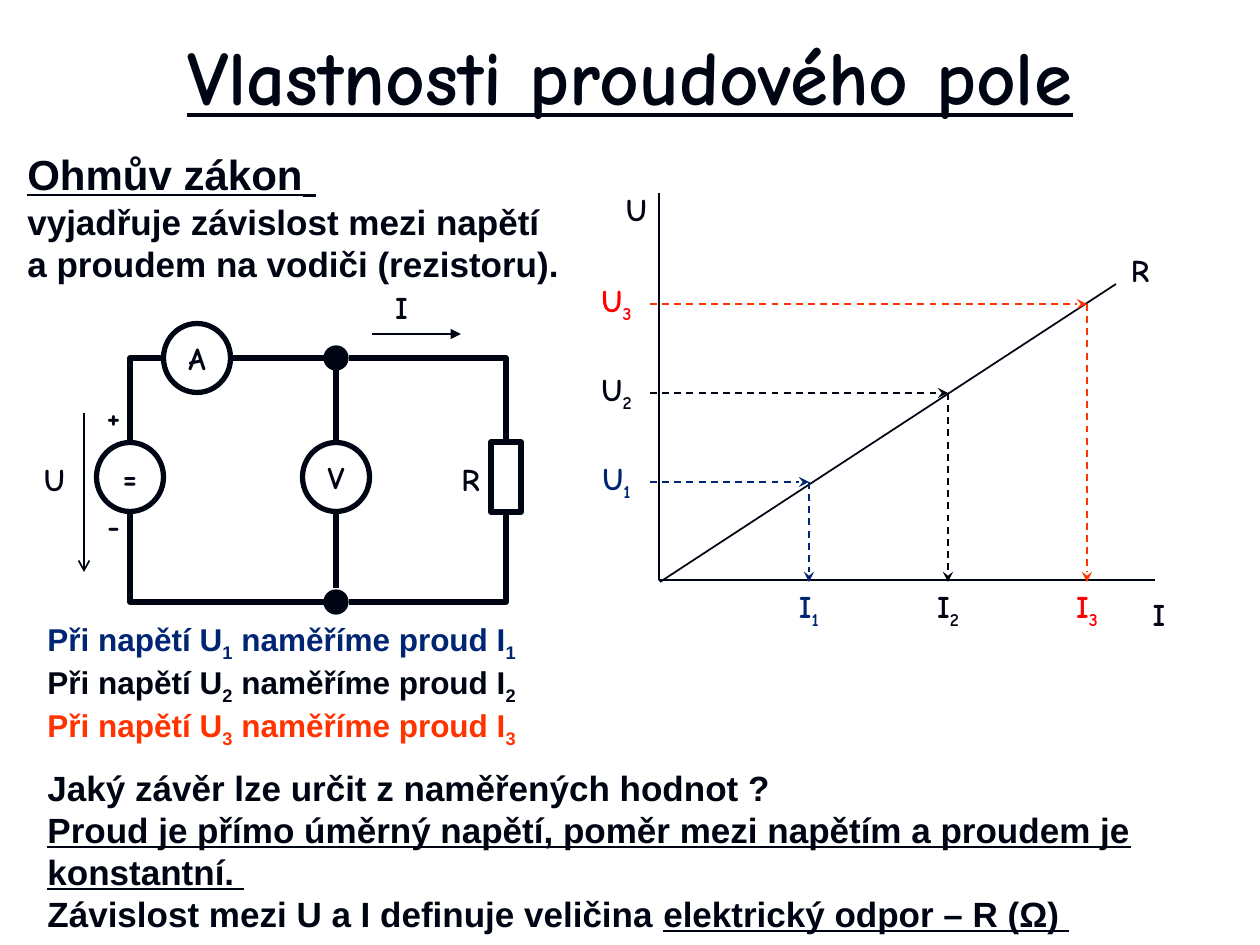
from pptx import Presentation
from pptx import util as u
from pptx.dml.color import RGBColor
from pptx.enum import dml, shapes, text
from pptx.oxml.ns import qn
from lxml import etree

SCALE = 914400 / 126  # EMU in one px
INK = {"black": "000514", "blue": "002673", "red": "FF0000", "fire": "FF3300"}
HAND, SANS = "Comic Neue", "Arial"


def px(n):
    return round(n * SCALE)


def rgb(ink):
    return RGBColor.from_string(INK[ink])


def add_run(para, words, size, font=SANS, ink="black", under=False, sub=False):
    run = para.add_run()
    run.text = words
    face = run.font
    face.size, face.name, face.bold = u.Pt(size), font, True
    face.underline = under
    face.color.rgb = rgb(ink)
    if sub:
        face._element.set("baseline", "-25000")


def set_frame(frame, inset=None, wrap=True):
    frame.word_wrap = wrap
    frame.auto_size = text.MSO_AUTO_SIZE.SHAPE_TO_FIT_TEXT
    if inset is not None:
        frame.margin_left = frame.margin_right = px(inset)
        frame.margin_top = frame.margin_bottom = px(inset)


def add_box(slide, x, y, w, h, **opts):
    frame = slide.shapes.add_textbox(px(x), px(y), px(w), px(h)).text_frame
    set_frame(frame, **opts)
    return frame


def add_label(slide, x, y, w, words, sub="", ink="black"):
    para = add_box(slide, x, y, w, 48, inset=5, wrap=False).paragraphs[0]
    para.alignment = text.PP_ALIGN.CENTER
    add_run(para, words, 18, HAND, ink)
    if sub:
        add_run(para, sub, 18, HAND, ink, sub=True)


def add_part(slide, kind, x, y, w, h, words="", solid=False):
    part = slide.shapes.add_shape(kind, px(x), px(y), px(w), px(h))
    part.shadow.inherit = False
    part.line.color.rgb, part.line.width = rgb("black"), u.Pt(3)
    if solid:
        part.fill.solid()
        part.fill.fore_color.rgb = rgb("black")
    else:
        part.fill.background()
    if words:
        frame = part.text_frame
        set_frame(frame, inset=5)
        frame.vertical_anchor = text.MSO_ANCHOR.MIDDLE
        para = frame.paragraphs[0]
        para.alignment = text.PP_ALIGN.CENTER
        add_run(para, words, 18, HAND)


def add_line(slide, x1, y1, x2, y2, width=1, ink="black", head="", dash=False, bent=False):
    kind = shapes.MSO_CONNECTOR.ELBOW if bent else shapes.MSO_CONNECTOR.STRAIGHT
    line = slide.shapes.add_connector(kind, px(x1), px(y1), px(x2), px(y2))
    line.line.color.rgb, line.line.width = rgb(ink), u.Pt(width)
    if dash:
        line.line.dash_style = dml.MSO_LINE.DASH
    props = line._element.spPr
    if bent:  # one corner: first across, then up or down
        props.find(qn("a:prstGeom")).set("prst", "bentConnector2")
    if head:
        etree.SubElement(props.find(qn("a:ln")), qn("a:tailEnd"), type=head)
    etree.SubElement(props, qn("a:effectLst"))


def add_title(slide):
    title = slide.shapes.title
    title.left, title.top, title.width, title.height = px(63), px(16), px(1134), px(118)
    frame = title.text_frame
    frame.vertical_anchor = text.MSO_ANCHOR.MIDDLE
    para = frame.paragraphs[0]
    para.alignment = text.PP_ALIGN.CENTER
    add_run(para, "Vlastnosti proudového pole", 44, HAND, under=True)


def add_law(slide):
    frame = add_box(slide, 15, 135, 566, 155)
    para = frame.paragraphs[0]
    add_run(para, "Ohmův zákon", 24, under=True)
    add_run(para, " ", 28, under=True)
    add_run(frame.add_paragraph(),
            "vyjadřuje závislost mezi napětí a proudem na vodiči (rezistoru).", 20)


def add_circuit(slide):
    oval, rect = shapes.MSO_SHAPE.OVAL, shapes.MSO_SHAPE.RECTANGLE
    left, mid, right, top, base = 130, 336, 506, 358, 602
    # Source, meters and resistor
    for cx, cy, words in ((left, 477, "="), (mid, 477, "V"), (197, top, "A")):
        add_part(slide, oval, cx - 33.5, cy - 34.5, 67, 69, words)
    add_part(slide, rect, right - 15, 442, 30, 70)
    # Nodes
    for y in (top, base):
        add_part(slide, oval, mid - 10, y - 10, 20, 20, solid=True)
    # Wires
    for ends in ((161, top, left, 440), (349, top, right, 440),
                 (324, base, left, 514), (349, base, right, 514)):
        add_line(slide, *ends, width=3, bent=True)
    for ends in ((233, top, 324, top), (mid, 440, mid, 370), (mid, 588, mid, 514)):
        add_line(slide, *ends, width=3)
    # Current and voltage arrows
    add_line(slide, 372, 334, 461, 334, head="triangle")
    add_line(slide, 84, 413, 84, 572, head="arrow")
    for x, y, words in ((382, 283, "I"), (94, 392, "+"), (94, 501, "-"),
                        (35, 455, "U"), (451, 455, "R")):
        add_label(slide, x, y, 39, words)


def add_graph(slide):
    # Axes
    path = slide.shapes.build_freeform(px(659), px(193), scale=1.0)
    path.add_line_segments([(px(659), px(580)), (px(1155), px(580))], close=False)
    axes = path.convert_to_shape()
    axes.shadow.inherit = False
    axes.fill.background()
    axes.line.color.rgb, axes.line.width = rgb("black"), u.Pt(1)
    for x, y, w, words in ((620, 185, 33, "U"), (1145, 590, 28, "I"), (1125, 246, 30, "R")):
        add_label(slide, x, y, w, words)
    # Resistance line
    add_line(slide, 660, 582, 1116, 284)
    # Measured pairs of voltage and current
    for i, (ink, mark) in enumerate((("blue", "blue"), ("black", "black"), ("fire", "red"))):
        x, y, num = 809 + 139 * i, 482 - 89 * i, str(i + 1)
        add_line(slide, 650, y, x, y, ink=ink, head="stealth", dash=True)
        add_line(slide, x, y, x, 582, ink=ink, head="stealth", dash=True)
        add_label(slide, 593, y - 28, 47, "U", num, mark)
        add_label(slide, x - 20, 582, 40, "I", num, mark)


def add_notes(slide):
    frame = add_box(slide, 35, 614, 1191, 315)
    para = frame.paragraphs[0]
    # Measurements
    for num, ink in (("1", "blue"), ("2", "black"), ("3", "fire")):
        for words in ("Při napětí U", " naměříme proud I"):
            add_run(para, words, 18, ink=ink)
            add_run(para, num, 18, ink=ink, sub=True)
        para = frame.add_paragraph()
    # Conclusion
    para.space_before = u.Pt(10)
    add_run(para, "Jaký závěr lze určit z naměřených hodnot ?", 20)
    add_run(frame.add_paragraph(), "Proud je přímo úměrný napětí, poměr mezi napětím "
            "a proudem je konstantní. ", 20, under=True)
    para = frame.add_paragraph()
    add_run(para, "Závislost mezi U a I definuje veličina ", 20)
    add_run(para, "elektrický odpor – R (Ω) ", 20, under=True)


def main():
    deck = Presentation()
    deck.slide_width, deck.slide_height = px(1260), px(945)
    slide = deck.slides.add_slide(deck.slide_layouts[5])
    add_title(slide)
    add_law(slide)
    add_circuit(slide)
    add_graph(slide)
    add_notes(slide)
    deck.save("out.pptx")


if __name__ == "__main__":
    main()
